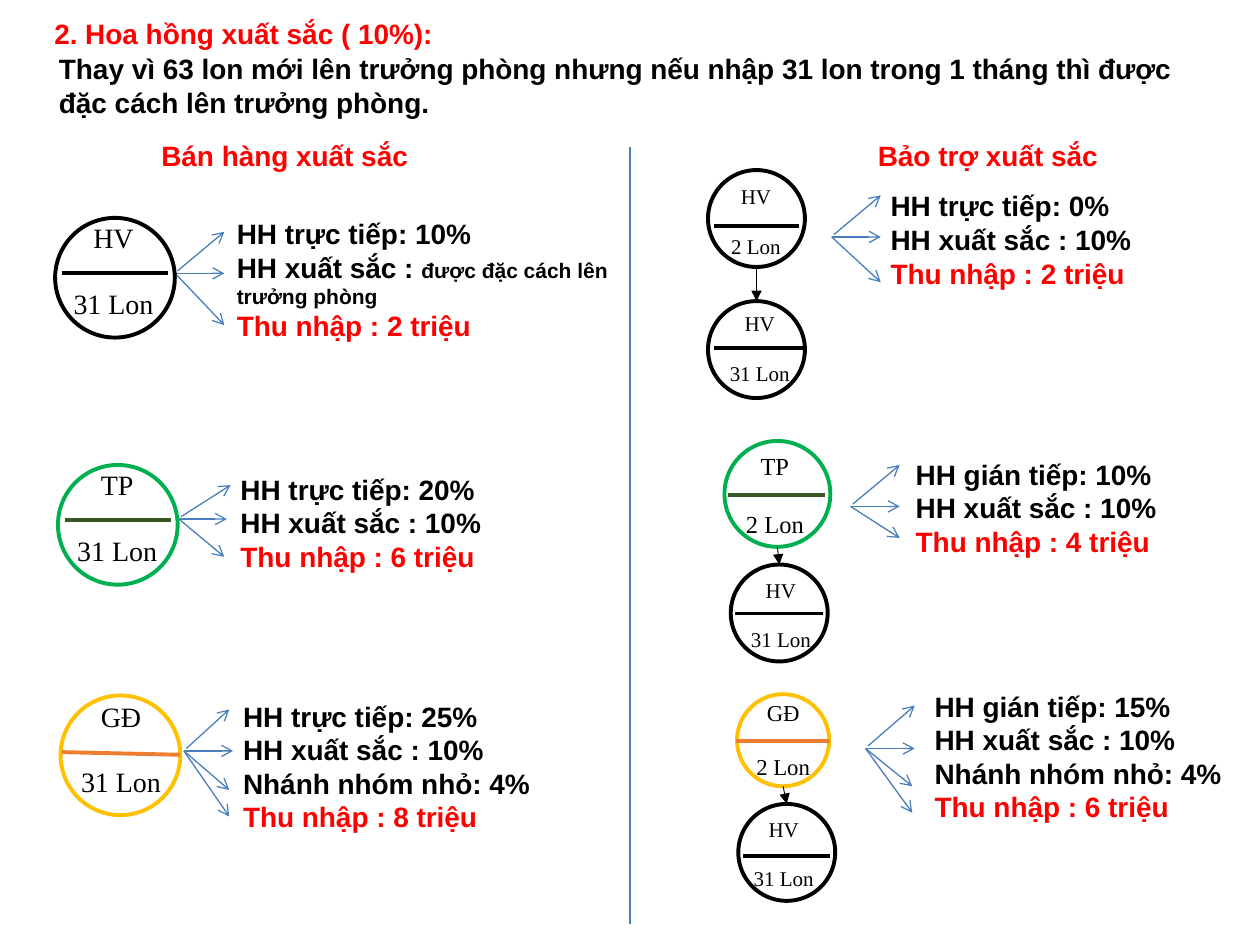
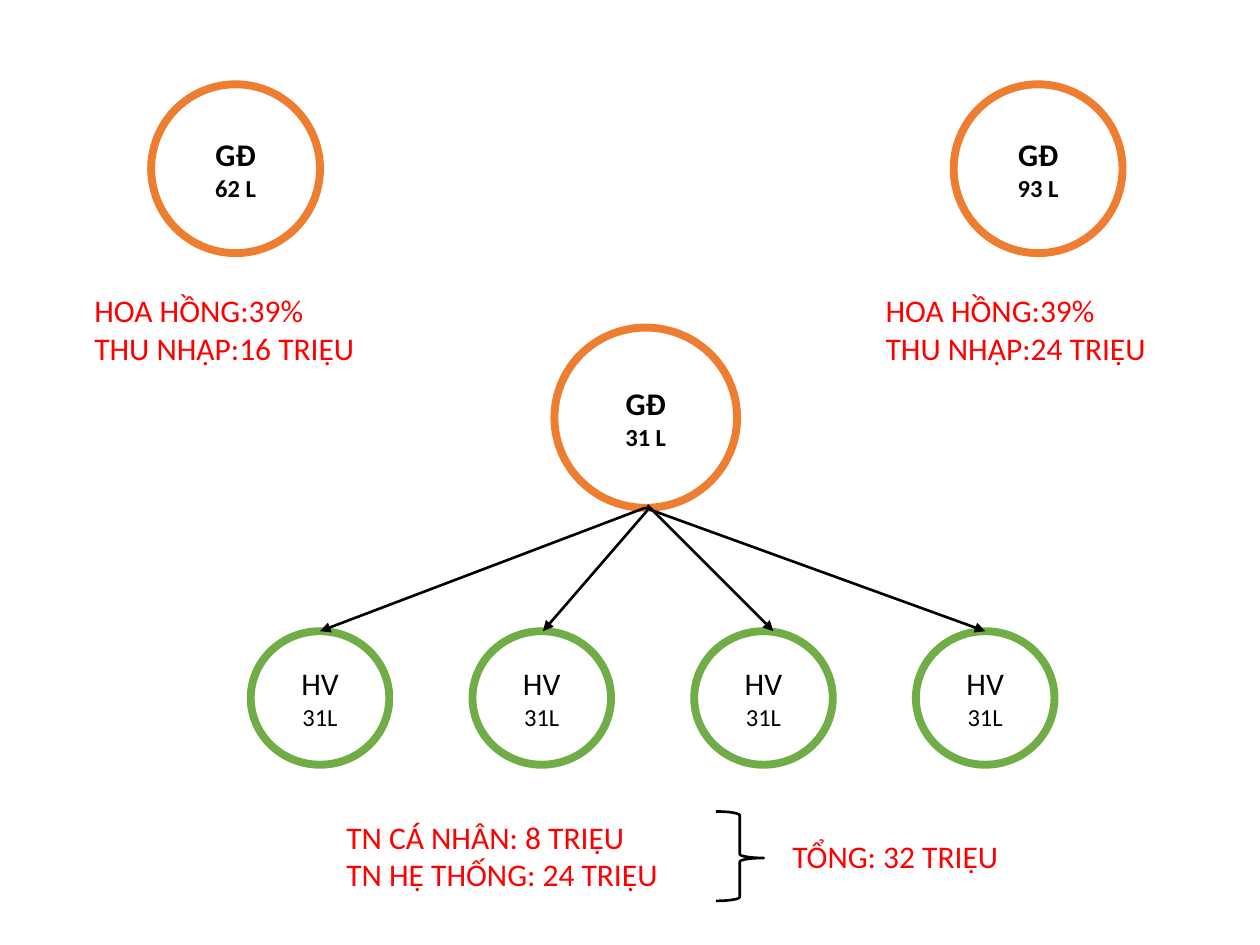
from dataclasses import dataclass, replace

from lxml import etree
from pptx import Presentation
from pptx.dml.color import RGBColor
from pptx.enum import shapes, text
from pptx.oxml import ns
from pptx.util import Pt


@dataclass(frozen=True)
class Style:
    font: str
    size: float
    color: str
    bold: bool = False


class Theme:
    black, white, red, blue = "000000", "FFFFFF", "FF0000", "4B7EBC"
    green, dark_green, gold, orange, leaf = "00B050", "385723", "FFC000", "ED7D31", "70AD47"
    thin, hairline, ring, arrow, thick = 0.75, 0.5, 2.25, 1.5, 4.5
    body = Style("Arial", 16, black, True)
    highlight = replace(body, color=red)
    remark = replace(body, size=12)
    badge = Style("Times New Roman", 16, black)
    node = Style("Calibri", 18, black)
    node_count = replace(node, size=14)
    income = replace(node, color=red)


# Slide 1: all places are (left, top, width, height) or x, y in points
TITLE = ("2. Hoa hồng xuất sắc ( 10%):", (23.8, 5.8, 275.8, 26.6))
INTRO = ("Thay vì 63 lon mới lên trưởng phòng nhưng nếu nhập 31 lon trong 1 tháng "
         "thì được đặc cách lên trưởng phòng.", (26.6, 25.9, 663.1, 46))
COLUMN_HEADINGS = [("Bán hàng xuất sắc", 66.2), ("Bảo trợ xuất sắc", 468)]
DIVIDER = ((360, 84.2), (360, 527.8))

# place, lines, remark after the second line
COMMISSIONS = [
    ((128.2, 120.2, 238.3, 79.9),
     ["HH trực tiếp: 10%", "HH xuất sắc : ", "Thu nhập : 2 triệu"],
     "được đặc cách lên trưởng phòng"),
    ((130.3, 266.4, 193, 65.5),
     ["HH trực tiếp: 20%", "HH xuất sắc : 10%", "Thu nhập : 6 triệu"], ""),
    ((131.8, 396, 193, 85),
     ["HH trực tiếp: 25%", "HH xuất sắc : 10%", "Nhánh nhóm nhỏ: 4%", "Thu nhập : 8 triệu"], ""),
    ((501.8, 104.4, 193, 65.5),
     ["HH trực tiếp: 0%", "HH xuất sắc : 10%", "Thu nhập : 2 triệu"], ""),
    ((516.2, 257.8, 193, 65.5),
     ["HH gián tiếp: 10%", "HH xuất sắc : 10%", "Thu nhập : 4 triệu"], ""),
    ((527, 390.2, 193, 85),
     ["HH gián tiếp: 15%", "HH xuất sắc : 10%", "Nhánh nhóm nhỏ: 4%", "Thu nhập : 6 triệu"], ""),
]

# origin, arrow tips
FANS = [
    ((100.1, 156.2), [(128.2, 132.5), (128.2, 156.2), (128.2, 185.8)]),
    ((102.2, 296.6), [(131.8, 277.2), (129.6, 296.6), (128.2, 318.2)]),
    ((105.1, 429.1), [(131, 405.4), (133.2, 429.1), (131, 451.4), (131, 466.6)]),
    ((475.2, 135.4), [(503.3, 111.6), (503.3, 135.4), (503.3, 161.3)]),
    ((486, 289.4), [(514.1, 265.7), (514.1, 289.4), (514.1, 307.4)]),
    ((494.6, 427.7), [(522.7, 403.2), (522.7, 427.7), (521.3, 449.3), (521.3, 464.4)]),
]

RANK_COLORS = {"HV": (Theme.black, Theme.black), "TP": (Theme.green, Theme.dark_green),
               "GĐ": (Theme.gold, Theme.orange)}

# rank, count, type size, circle (left, top, diameter), label (left, top, width), bar ends
SELLERS = [
    ("HV", "31 Lon", 16, (31.5, 124.5, 68.4), (34.6, 122.4, 60.5), ((35.3, 156.2), (95.8, 156.2))),
    ("TP", "31 Lon", 16, (33.1, 265.7, 68.4), (36.7, 263.5, 60.5), ((37.4, 297.4), (97.9, 297.4))),
    ("GĐ", "31 Lon", 16, (34.6, 397.4, 68.4), (38.9, 396, 60.5), ((35.3, 429.8), (103, 431.3))),
]
# each sponsor is followed by the member below
SPONSORS = [
    (("HV", "2 Lon", 12, (404.6, 97.2, 55.4), (401, 101.5, 62), ((408.2, 128.9), (456.5, 128.9))),
     ("HV", "31 Lon", 12, (404.6, 172.1, 55.4), (408.2, 174.2, 52), ((408.2, 198.7), (458.6, 198.7)))),
    (("TP", "2 Lon", 14, (414, 252, 60.5), (414, 254.2, 57.6), ((416.2, 283), (471.6, 283))),
     ("HV", "31 Lon", 12, (417.6, 322.6, 55.4), (416.2, 326.2, 60), ((419.8, 350.6), (470.2, 350.6)))),
    (("GĐ", "2 Lon", 13, (421.2, 396.7, 52.6), (420.5, 396, 54), ((420.5, 423.4), (474.5, 423.4))),
     ("HV", "31 Lon", 12, (421.9, 459.4, 55.4), (400.3, 463, 95), ((424.8, 488.9), (474.5, 488.9)))),
]

# Slide 2
DIRECTORS = [("62 L", (86.4, 48.2, 96.5, 96.5)), ("93 L", (545, 48.2, 96.5, 96.5)),
             ("31 L", (316.8, 187.2, 104.4, 103))]
MEMBER_COUNT, MEMBER_PITCH = 4, 126.7
FIRST_MEMBER = (143.3, 360.7, 79.2, 76.3)
MEMBER_ARROWS = [((370, 288.7), (442, 360.7)), ((370, 291.6), (310.3, 360.7)),
                 ((368.6, 290.2), (563, 360.7)), ((368.6, 290.2), (182.9, 360.7))]
INCOMES = [
    (["HOA HỒNG:39%", "THU NHẬP:16 TRIỆU"], (46.8, 162.7, 192.2, 51.1)),
    (["HOA HỒNG:39%", "THU NHẬP:24 TRIỆU"], (499, 162.7, 192.2, 51.1)),
    (["TN CÁ NHÂN: 8 TRIỆU", "TN HỆ THỐNG: 24 TRIỆU"], (190.8, 463.7, 229.7, 51.1)),
    (["TỔNG: 32 TRIỆU"], (445.7, 474.5, 156.2, 28.8)),
]
BRACE = (409, 463.7, 27.4, 51.1)


def points(values):
    return [Pt(value) for value in values]


def format_run(run, style):
    run.font.name = style.font
    run.font.size = Pt(style.size)
    run.font.bold = style.bold
    run.font.color.rgb = RGBColor.from_string(style.color)


def write(text_frame, lines, centred=False, wrap=True, anchor=text.MSO_ANCHOR.TOP):
    """Fill a frame with (wording, style) lines."""
    text_frame.text = "\n".join(wording for wording, _ in lines)
    text_frame.auto_size = text.MSO_AUTO_SIZE.NONE
    text_frame.word_wrap = wrap
    text_frame.vertical_anchor = anchor
    text_frame.margin_left = text_frame.margin_right = Pt(7.2)
    text_frame.margin_top = text_frame.margin_bottom = Pt(3.6)
    for paragraph, (_, style) in zip(text_frame.paragraphs, lines):
        paragraph.alignment = text.PP_ALIGN.CENTER if centred else text.PP_ALIGN.LEFT
        for run in paragraph.runs:
            format_run(run, style)


def add_text(slide, place, lines, **layout):
    text_frame = slide.shapes.add_textbox(*points(place)).text_frame
    write(text_frame, lines, **layout)
    return text_frame


def add_line(container, start, end, color, width, head=None):
    connector = container.add_connector(shapes.MSO_CONNECTOR.STRAIGHT, *points(start + end))
    connector.line.color.rgb = RGBColor.from_string(color)
    connector.line.width = Pt(width)
    if head:
        etree.SubElement(connector.line._get_or_add_ln(), ns.qn("a:tailEnd"), type=head)
    etree.SubElement(connector._element.spPr, ns.qn("a:effectLst"))


def add_outline(slide, kind, place, color, width, fill=None):
    shape = slide.shapes.add_shape(kind, *points(place))
    shape.shadow.inherit = False
    shape.line.color.rgb = RGBColor.from_string(color)
    shape.line.width = Pt(width)
    if fill:
        shape.fill.solid()
        shape.fill.fore_color.rgb = RGBColor.from_string(fill)
    else:
        shape.fill.background()
    return shape


def add_badge(slide, rank, count, size, circle, label, bar):
    """Draw a circle with the rank above a bar and the can count below it."""
    ring_color, bar_color = RANK_COLORS[rank]
    left, top, diameter = circle
    add_outline(slide, shapes.MSO_SHAPE.OVAL, (left, top, diameter, diameter),
                ring_color, Theme.ring)
    style = replace(Theme.badge, size=size)
    label_frame = add_text(slide, (*label, 3.6 * size + 7.2), [(rank, style), (count, style)],
                           centred=True, wrap=False)
    label_frame.paragraphs[1].space_before = Pt(round(1.15 * size, 1))
    add_line(slide.shapes, *bar, bar_color, Theme.ring)


def add_fan(slide, origin, tips):
    group = slide.shapes.add_group_shape()
    x, y = origin
    for index, tip in enumerate(tips):
        start = origin if index else (x + 1.4, y - 1.4)
        add_line(group.shapes, start, tip, Theme.blue, Theme.thin, "arrow")


def add_sponsorship(slide, sponsor, member):
    for badge in (sponsor, member):
        add_badge(slide, *badge)
    (left, top, diameter), (member_left, member_top, member_diameter) = sponsor[3], member[3]
    add_line(slide.shapes, (left + diameter / 2, top + diameter),
             (member_left + member_diameter / 2, member_top),
             Theme.black, Theme.hairline, "triangle")


def add_node(slide, rank, count, place, color, bold=False):
    shape = add_outline(slide, shapes.MSO_SHAPE.FLOWCHART_CONNECTOR, place,
                        color, Theme.thick, Theme.white)
    write(shape.text_frame, [(rank, replace(Theme.node, bold=bold)),
                             (count, replace(Theme.node_count, bold=bold))],
          centred=True, anchor=text.MSO_ANCHOR.MIDDLE)


def build_excellence_slide(presentation):
    slide = presentation.slides.add_slide(presentation.slide_layouts[5])
    title, (wording, place) = slide.shapes.title, TITLE
    title.left, title.top, title.width, title.height = points(place)
    write(title.text_frame, [(wording, Theme.highlight)])
    add_line(slide.shapes, *DIVIDER, Theme.blue, Theme.thin)
    for heading, left in COLUMN_HEADINGS:
        add_text(slide, (left, 75.6, 193, 26.6), [(heading, Theme.highlight)], centred=True)
    wording, place = INTRO
    add_text(slide, place, [(wording, Theme.body)])

    for place, lines, remark in COMMISSIONS:
        *rates, total = lines
        text_frame = add_text(slide, place, [(rate, Theme.body) for rate in rates]
                              + [(total, Theme.highlight)])
        if remark:
            run = text_frame.paragraphs[1].add_run()
            run.text = remark
            format_run(run, Theme.remark)
    for fan in FANS:
        add_fan(slide, *fan)
    for badge in SELLERS:
        add_badge(slide, *badge)
    for pair in SPONSORS:
        add_sponsorship(slide, *pair)


def build_network_slide(presentation):
    slide = presentation.slides.add_slide(presentation.slide_layouts[6])
    for count, place in DIRECTORS:
        add_node(slide, "GĐ", count, place, Theme.orange, bold=True)
    left, *rest = FIRST_MEMBER
    for index in range(MEMBER_COUNT):
        add_node(slide, "HV", "31L", (left + index * MEMBER_PITCH, *rest), Theme.leaf)
    for start, end in MEMBER_ARROWS:
        add_line(slide.shapes, start, end, Theme.black, Theme.arrow, "triangle")
    for lines, place in INCOMES:
        add_text(slide, place, [(line, Theme.income) for line in lines])
    brace = add_outline(slide, shapes.MSO_SHAPE.RIGHT_BRACE, BRACE, Theme.black, Theme.arrow)
    brace.adjustments[0], brace.adjustments[1] = 0.08, 0.52


def main():
    presentation = Presentation()
    presentation.slide_width, presentation.slide_height = Pt(720), Pt(540)
    build_excellence_slide(presentation)
    build_network_slide(presentation)
    presentation.save("out.pptx")


if __name__ == "__main__":
    main()
